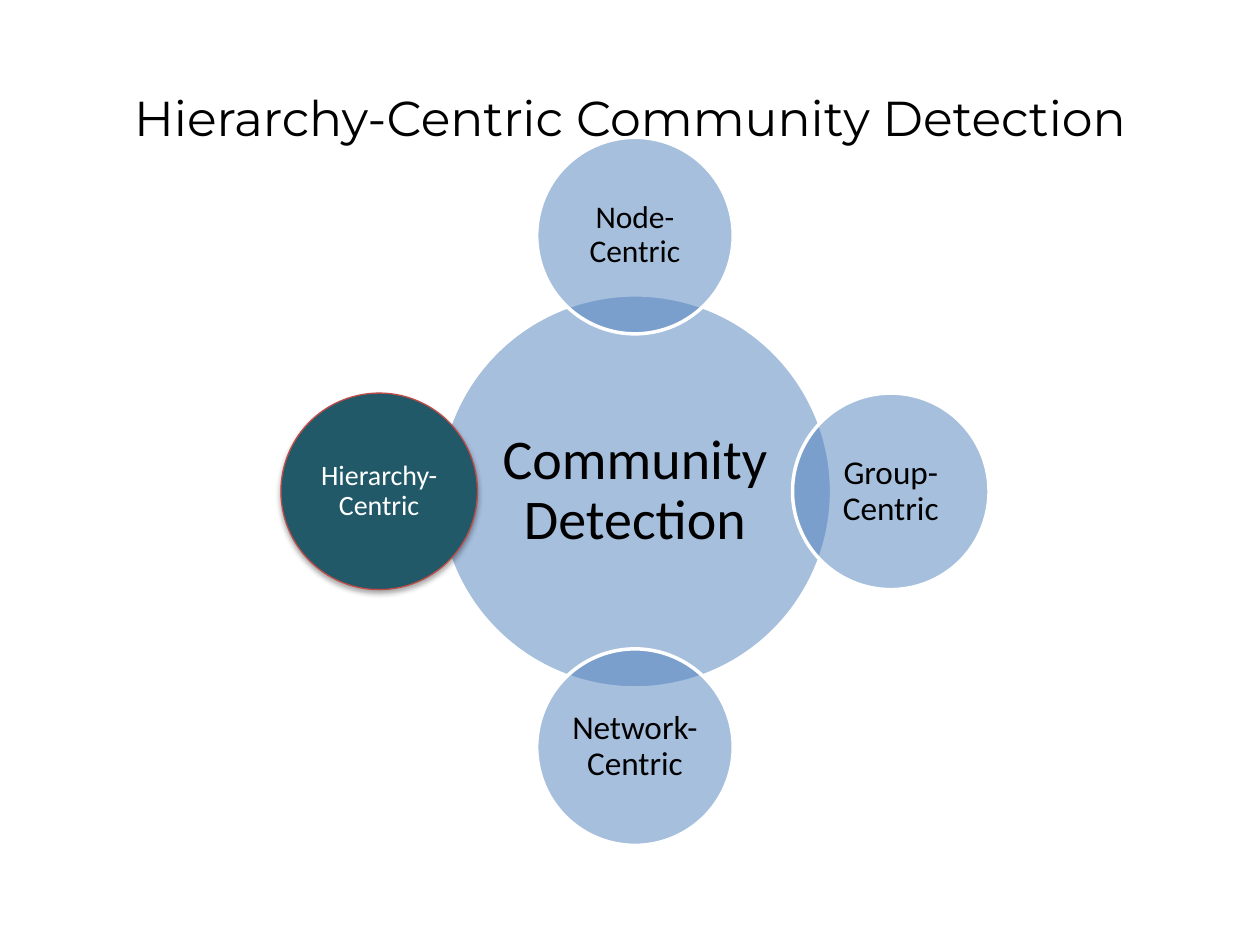
"""Build the slide on hierarchy-centric community detection."""
from lxml import etree
from pptx import Presentation
from pptx.dml.color import RGBColor
from pptx.enum.shapes import MSO_SHAPE
from pptx.enum.text import MSO_ANCHOR, PP_ALIGN
from pptx.oxml import parse_xml
from pptx.oxml.ns import qn
from pptx.util import Inches, Pt

OVAL = MSO_SHAPE.OVAL
MIDDLE = MSO_ANCHOR.MIDDLE
CENTER = PP_ALIGN.CENTER

BLACK = RGBColor(0x00, 0x00, 0x00)
WHITE = RGBColor(0xFF, 0xFF, 0xFF)
BLUE = RGBColor(0x4F, 0x81, 0xBD)
TEAL = RGBColor(0x21, 0x59, 0x68)
RED = RGBColor(0xBF, 0x4C, 0x48)

CENTER_X, CENTER_Y = 5.04, 3.9
ORBIT = 2.03
HUB_SIZE, SATELLITE_SIZE = 3.12, 1.56

SATELLITES = [
    ("Node-Centric", 0, -1, 18),
    ("Group-Centric", 1, 0, 19),
    ("Network-Centric", 0, 1, 19),
]

SHADOW_XML = (
    '<a:effectLst xmlns:a="http://schemas.openxmlformats.org/drawingml/2006/main">'
    '<a:outerShdw blurRad="40000" dist="23000" dir="5400000" rotWithShape="0">'
    '<a:srgbClr val="000000"><a:alpha val="35000"/></a:srgbClr>'
    '</a:outerShdw></a:effectLst>'
)


def write_text(frame, text, size, font, color):
    """Write one centred paragraph into a text frame and return it."""
    frame.word_wrap = True
    frame.vertical_anchor = MIDDLE
    para = frame.paragraphs[0]
    para.text = text
    para.alignment = CENTER
    para.font.size = Pt(size)
    para.font.name = font
    para.font.color.rgb = color
    return para


def add_title(page, text):
    """Add the slide title."""
    box = page.shapes.add_textbox(Inches(0.5), Inches(0.3), Inches(9), Inches(1.25))
    write_text(box.text_frame, text, 28, "Montserrat", BLACK)


def add_circle(page, text, x, y, diameter, size, inset=0.03,
               fill=BLUE, line=WHITE, line_width=2, color=BLACK):
    """Add a labelled circle centred on a point."""
    circle = page.shapes.add_shape(
        OVAL, Inches(x - diameter / 2), Inches(y - diameter / 2),
        Inches(diameter), Inches(diameter))
    circle.shadow.inherit = False
    circle.fill.solid()
    circle.fill.fore_color.rgb = fill
    circle.line.color.rgb = line
    circle.line.width = Pt(line_width)
    frame = circle.text_frame
    frame.margin_left = frame.margin_right = Inches(inset)
    frame.margin_top = frame.margin_bottom = Inches(inset)
    para = write_text(frame, text, size, "Calibri", color)
    para.line_spacing = 0.9
    return circle


def make_translucent(shape, percent):
    """Set the opacity of a solid fill."""
    fill_color = shape.fill._xPr.find(qn("a:solidFill"))[0]
    etree.SubElement(fill_color, qn("a:alpha")).set("val", str(percent * 1000))


def add_soft_shadow(shape):
    """Give a shape a soft shadow below it."""
    properties = shape.element.spPr
    properties.replace(properties.find(qn("a:effectLst")), parse_xml(SHADOW_XML))


def main():
    """Build and save the deck."""
    deck = Presentation()
    deck.slide_width, deck.slide_height = Inches(10), Inches(7.5)
    page = deck.slides.add_slide(deck.slide_layouts[6])
    add_title(page, "Hierarchy-Centric Community Detection")

    hub = add_circle(page, "Community Detection", CENTER_X, CENTER_Y, HUB_SIZE, 32, 0.04)
    make_translucent(hub, 50)
    for text, across, down, size in SATELLITES:
        satellite = add_circle(page, text, CENTER_X + across * ORBIT,
                               CENTER_Y + down * ORBIT, SATELLITE_SIZE, size)
        make_translucent(satellite, 50)

    highlight = add_circle(page, "Hierarchy-Centric", CENTER_X - ORBIT, CENTER_Y,
                           SATELLITE_SIZE, 16, 0.02, TEAL, RED, 0.75, WHITE)
    add_soft_shadow(highlight)
    deck.save("out.pptx")


if __name__ == "__main__":
    main()
